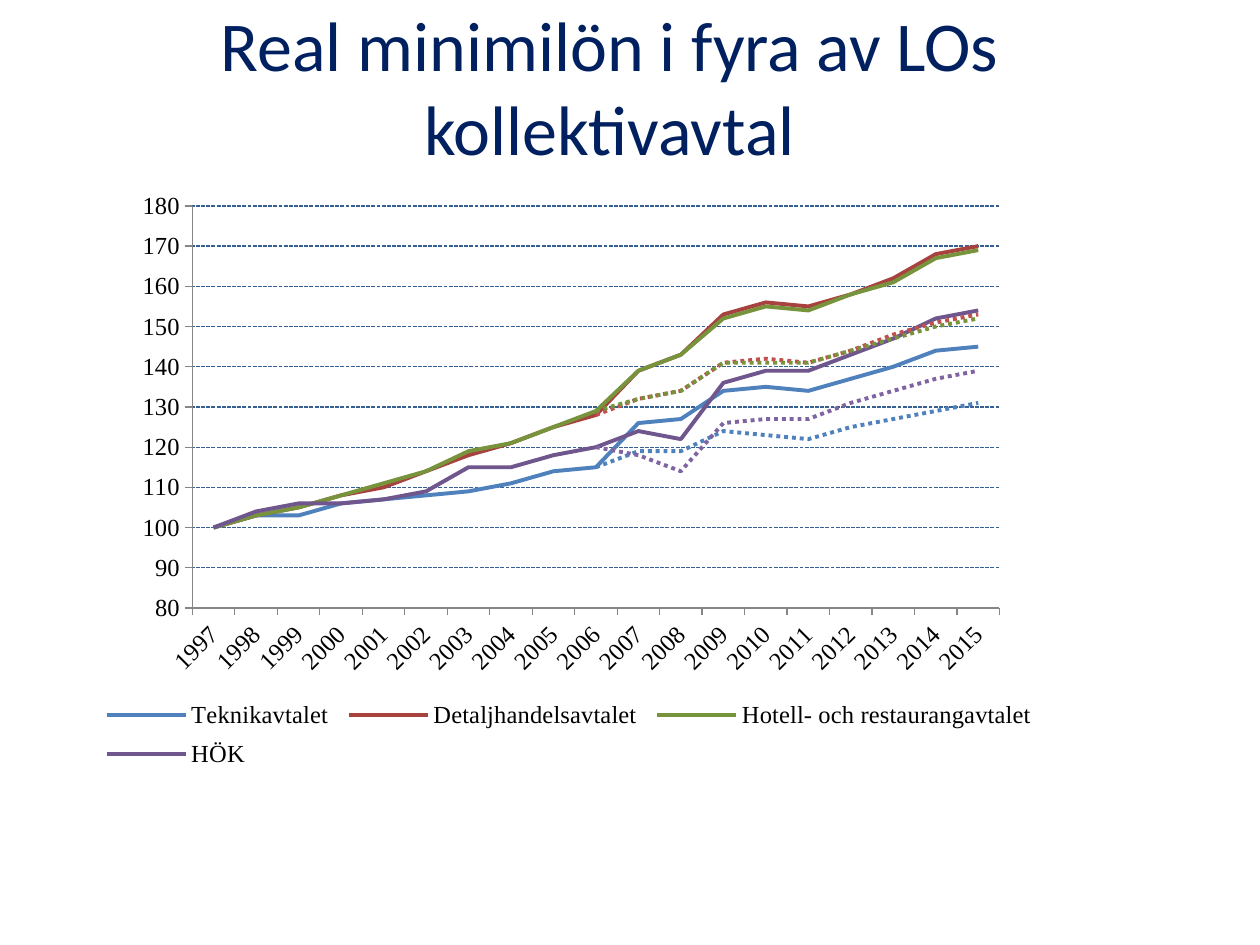
from lxml import etree
from pptx import Presentation
from pptx import util as u
from pptx.chart.data import CategoryChartData
from pptx.dml.color import RGBColor
from pptx.enum import chart as charts, dml, text
from pptx.oxml.ns import qn

YEARS = range(1997, 2016)
FIRST_DOTTED_YEAR = 2006
# Name, line colour, dotted line colour, values from 1997, dotted values from 2006
AGREEMENTS = [
    ("Teknikavtalet", "4F81BD", "4F81BD",
     [100, 103, 103, 106, 107, 108, 109, 111, 114, 115,
      126, 127, 134, 135, 134, 137, 140, 144, 145],
     [115, 119, 119, 124, 123, 122, 125, 127, 129, 131]),
    ("Detaljhandelsavtalet", "A8423F", "C0504D",
     [100, 103, 105, 108, 110, 114, 118, 121, 125, 128,
      139, 143, 153, 156, 155, 158, 162, 168, 170],
     [128, 132, 134, 141, 142, 141, 144, 148, 151, 153]),
    ("Hotell- och restaurangavtalet", "77933C", "77933C",
     [100, 103, 105, 108, 111, 114, 119, 121, 125, 129,
      139, 143, 152, 155, 154, 158, 161, 167, 169],
     [129, 132, 134, 141, 141, 141, 144, 147, 150, 152]),
    ("HÖK", "6F568D", "8064A2",
     [100, 104, 106, 106, 107, 109, 115, 115, 118, 120,
      124, 122, 136, 139, 139, 143, 147, 152, 154],
     [120, 118, 114, 126, 127, 127, 131, 134, 137, 139]),
]


def rgb(value):
    return RGBColor.from_string(value)


def style_font(font, name, size, colour):
    font.name = name
    font.size = u.Pt(size)
    font.color.rgb = rgb(colour)


def style_line(line, colour, width, dash=None):
    line.color.rgb = rgb(colour)
    line.width = u.Pt(width)
    if dash:
        line.dash_style = dash


def chart_element(tag, **attributes):
    element = etree.Element(qn(f"c:{tag}"))
    for name, value in attributes.items():
        element.set(name, str(value))
    return element


def manual_layout(x, y, w, h, inner=False):
    """Layout in fractions of the chart's size."""
    layout = chart_element("layout")
    manual = etree.SubElement(layout, qn("c:manualLayout"))
    if inner:
        manual.append(chart_element("layoutTarget", val="inner"))
    for tag in ("xMode", "yMode"):
        manual.append(chart_element(tag, val="edge"))
    for tag, value in zip("xywh", (x, y, w, h)):
        manual.append(chart_element(tag, val=value))
    return layout


def remove_layout(parent):
    for layout in parent.findall(qn("c:layout")):
        parent.remove(layout)


def add_title(slide, left, top, width, height):
    title = slide.shapes.title
    title.left, title.top, title.width, title.height = left, top, width, height
    frame = title.text_frame
    frame.word_wrap = True
    frame.vertical_anchor = text.MSO_ANCHOR.MIDDLE
    paragraph = frame.paragraphs[0]
    paragraph.alignment = text.PP_ALIGN.CENTER
    run = paragraph.add_run()
    run.text = "Real minimilön i fyra av LOs kollektivavtal"
    style_font(run.font, "Calibri", 40, "002060")


def wage_data():
    data = CategoryChartData(number_format="0")
    data.categories = [str(year) for year in YEARS]
    for name, _, _, values, _ in AGREEMENTS:
        data.add_series(name, values)
    gap = [None] * (FIRST_DOTTED_YEAR - YEARS[0])
    for number, agreement in enumerate(AGREEMENTS, len(AGREEMENTS) + 1):
        data.add_series(f"Series {number}", gap + agreement[-1])
    return data


def style_series(plot):
    plot.vary_by_categories = False
    count = len(AGREEMENTS)
    for index, series in enumerate(plot.series):
        _, solid, dotted, _, _ = AGREEMENTS[index % count]
        series.smooth = False
        series.marker.style = charts.XL_MARKER_STYLE.NONE
        if index < count:
            style_line(series.format.line, solid, 2.25)
        else:
            style_line(series.format.line, dotted, 2.25, dml.MSO_LINE.ROUND_DOT)


def style_axes(chart):
    for axis in (chart.category_axis, chart.value_axis):
        axis.major_tick_mark = charts.XL_TICK_MARK.OUTSIDE
        axis.minor_tick_mark = charts.XL_TICK_MARK.NONE
        style_font(axis.tick_labels.font, "Times New Roman", 14, "000000")
        style_line(axis.format.line, "868686", 0.75)
    labels = chart.category_axis.tick_labels.font
    labels.bold = False
    body = chart.category_axis._element.find(f"{qn('c:txPr')}/{qn('a:bodyPr')}")
    body.set("rot", str(-45 * 60000))
    values = chart.value_axis
    values.minimum_scale, values.maximum_scale, values.major_unit = 80, 180, 10
    values.has_major_gridlines = True
    style_line(values.major_gridlines.format.line, "376092", 0.75,
               dml.MSO_LINE.SQUARE_DOT)


def add_legend(chart):
    """Legend below the plot, without the dotted series."""
    chart.has_legend = True
    legend = chart.legend
    legend.position = charts.XL_LEGEND_POSITION.RIGHT
    legend.include_in_layout = False
    style_font(legend.font, "Times New Roman", 14, "000000")
    root = legend._element
    remove_layout(root)
    position = root.find(qn("c:legendPos"))
    position.addnext(manual_layout(0.03, 0.85, 0.95, 0.15))
    count = len(AGREEMENTS)
    for index in reversed(range(count, 2 * count)):
        entry = chart_element("legendEntry")
        entry.append(chart_element("idx", val=index))
        entry.append(chart_element("delete", val=1))
        position.addnext(entry)


def add_wage_chart(slide, left, top, width, height):
    frame = slide.shapes.add_chart(charts.XL_CHART_TYPE.LINE, left, top,
                                   width, height, wage_data())
    chart = frame.chart
    chart.has_title = False
    style_font(chart.font, "Times New Roman", 14, "000000")
    style_series(chart.plots[0])
    style_axes(chart)
    add_legend(chart)
    plot_area = chart._chartSpace.find(f".//{qn('c:plotArea')}")
    remove_layout(plot_area)
    plot_area.insert(0, manual_layout(0.128, 0.051, 0.808, 0.665, inner=True))


def main():
    presentation = Presentation()
    presentation.slide_width, presentation.slide_height = u.Cm(25.4), u.Cm(19.05)
    slide = presentation.slides.add_slide(presentation.slide_layouts[5])
    add_title(slide, u.Cm(0.71), u.Cm(-0.48), u.Cm(23.16), u.Cm(4.39))
    add_wage_chart(slide, u.Cm(1.3), u.Cm(3.53), u.Cm(20.14), u.Cm(12.19))
    presentation.save("out.pptx")


if __name__ == "__main__":
    main()
